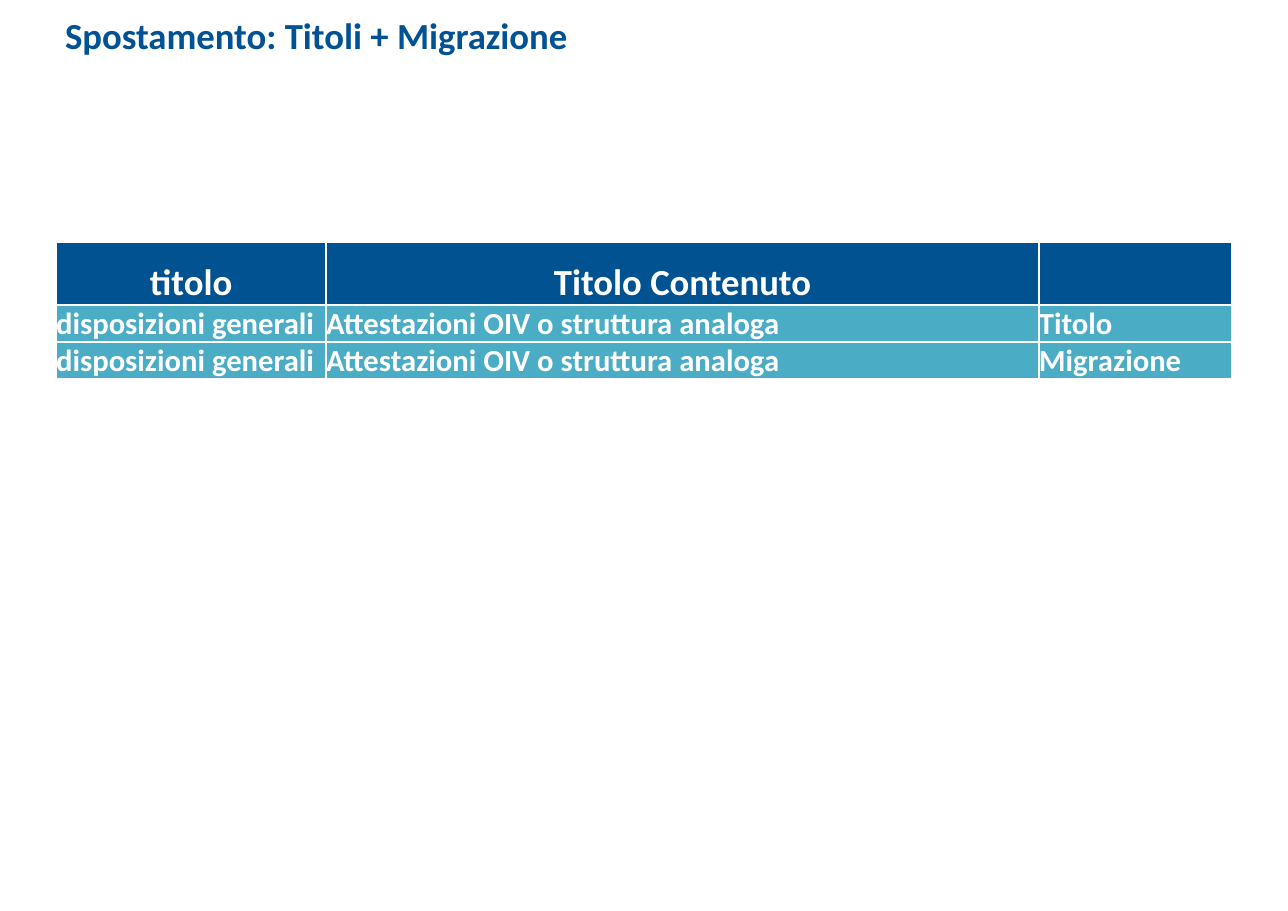
from dataclasses import dataclass

from lxml import etree
from pptx import Presentation
from pptx.dml.color import RGBColor
from pptx.enum.text import MSO_ANCHOR, PP_ALIGN
from pptx.oxml.ns import qn
from pptx.util import Pt

BOTTOM = MSO_ANCHOR.BOTTOM
LEFT = PP_ALIGN.LEFT
CENTER = PP_ALIGN.CENTER
PX = 9144


@dataclass(frozen=True)
class Theme:
    font: str = "Calibri"
    title: str = "005294"
    header: str = "005291"
    body: str = "4BACC6"
    white: str = "FFFFFF"
    large: int = 24
    medium: int = 20
    border: int = 1


THEME = Theme()
COLUMN_WIDTHS = (245, 647, 175)
ROW_HEIGHTS = (57, 33, 33)
ROWS = (
    ("titolo", "Titolo Contenuto", ""),
    ("disposizioni generali", "Attestazioni OIV o struttura analoga", "Titolo"),
    ("disposizioni generali", "Attestazioni OIV o struttura analoga", "Migrazione"),
)


def px(length):
    return length * PX


def style_text(para, size, color):
    font = para.font
    for target in (font, *(span.font for span in para.runs)):
        target.name = THEME.font
        target.size = Pt(size)
        target.bold = True
        target.color.rgb = RGBColor.from_string(color)


def set_margins(holder, left, top, right, bottom):
    holder.margin_left = px(left)
    holder.margin_top = px(top)
    holder.margin_right = px(right)
    holder.margin_bottom = px(bottom)


def add_title(page, text):
    box = page.shapes.add_textbox(0, 0, px(1169), px(68))
    frame = box.text_frame
    frame.word_wrap = True
    set_margins(frame, 59, 12, 24, 15)
    frame.text = text
    style_text(frame.paragraphs[0], THEME.large, THEME.title)


def set_borders(cell):
    properties = cell._tc.get_or_add_tcPr()
    for position, side in enumerate(("lnL", "lnR", "lnT", "lnB")):
        line = etree.Element(qn(f"a:{side}"), w=str(Pt(THEME.border)))
        fill = etree.SubElement(line, qn("a:solidFill"))
        etree.SubElement(fill, qn("a:srgbClr"), val=THEME.white)
        properties.insert(position, line)


def fill_cell(cell, text, color, size, alignment):
    cell.text = text
    cell.vertical_anchor = BOTTOM
    set_margins(cell, 0, 0, 0, 0)
    cell.fill.solid()
    cell.fill.fore_color.rgb = RGBColor.from_string(color)
    para = cell.text_frame.paragraphs[0]
    para.alignment = alignment
    style_text(para, size, THEME.white)
    set_borders(cell)


def add_content_table(page):
    frame = page.shapes.add_table(
        len(ROWS), len(COLUMN_WIDTHS), px(51), px(220),
        px(sum(COLUMN_WIDTHS)), px(sum(ROW_HEIGHTS)),
    )
    table = frame.table
    for column, width in zip(table.columns, COLUMN_WIDTHS):
        column.width = px(width)
    for index, (row, height) in enumerate(zip(table.rows, ROW_HEIGHTS)):
        row.height = px(height)
        if index == 0:
            style = (THEME.header, THEME.large, CENTER)
        else:
            style = (THEME.body, THEME.medium, LEFT)
        for cell, text in zip(row.cells, ROWS[index]):
            fill_cell(cell, text, *style)


def main():
    deck = Presentation()
    deck.slide_width = px(1169)
    deck.slide_height = px(827)
    page = deck.slides.add_slide(deck.slide_layouts[6])
    add_title(page, "Spostamento: Titoli + Migrazione")
    add_content_table(page)
    deck.save("out.pptx")


if __name__ == "__main__":
    main()
